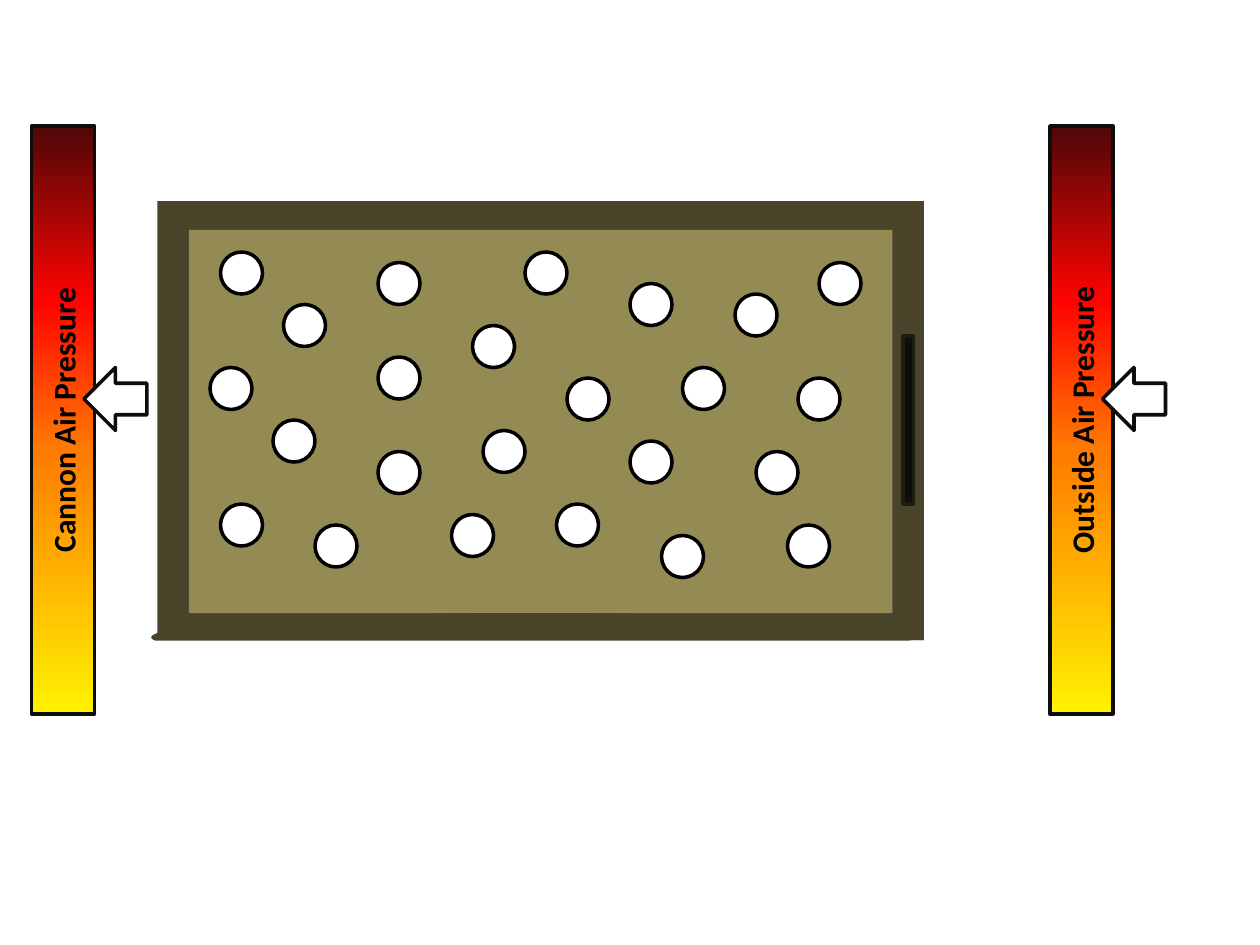
"""Draw a closed cannon of air particles between two pressure gauges."""
from typing import NamedTuple, Optional

from lxml.etree import SubElement
from pptx import Presentation
from pptx.dml.color import RGBColor
from pptx.enum.shapes import MSO_SHAPE
from pptx.enum.text import MSO_ANCHOR, PP_ALIGN
from pptx.oxml.ns import qn
from pptx.util import Inches, Pt

WHITE = RGBColor(0xFF, 0xFF, 0xFF)
BLACK = RGBColor(0, 0, 0)
INK = RGBColor(0x0D, 0x0D, 0x0D)
WALL = RGBColor(0x4A, 0x45, 0x2A)
ROOM = RGBColor(0x94, 0x8A, 0x54)
EDGE = RGBColor(0x1E, 0x1C, 0x11)
HEAT = (
    (0, RGBColor(0xFF, 0xF2, 0x00)),
    (45, RGBColor(0xFF, 0x7A, 0x00)),
    (70, RGBColor(0xFF, 0x03, 0x00)),
    (100, RGBColor(0x4D, 0x08, 0x08)),
)

COLS, ROWS = 120, 90
WIDE, HIGH = Inches(10), Inches(7.5)

RECT, OVAL, ARROW = MSO_SHAPE.RECTANGLE, MSO_SHAPE.OVAL, MSO_SHAPE.RIGHT_ARROW


class Part(NamedTuple):
    """A shape measured in grid columns and rows."""

    kind: MSO_SHAPE
    col: float
    row: float
    wide: float
    high: float
    fill: RGBColor
    line: Optional[RGBColor] = None
    turn: int = 0


class Gauge(NamedTuple):
    """A pressure scale and its marker column."""

    col: float
    mark: float
    label: str


BODY = (
    Part(RECT, 15, 19, 73, 42, WALL),
    Part(RECT, 18, 21.9, 67, 36.5, ROOM),
    Part(RECT, 86, 32, 1, 16, INK, EDGE),
)
DOTS = (
    (46, 41), (26, 40), (43, 49), (50, 24), (65, 35), (21, 48),
    (36, 43), (30, 50), (20, 35), (21, 24), (36, 25), (54, 36),
    (60, 42), (53, 48), (63, 51), (45, 31), (70, 28), (60, 27),
    (27, 29), (36, 34), (72, 43), (75, 50), (76, 36), (78, 25),
)
ENDS = (
    Part(OVAL, 15, 16.9, 73, 4.6, WALL),
    Part(RECT, 13, 17, 79, 2, WHITE, WHITE),
    Part(OVAL, 15, 14.5, 73, 4.6, WHITE),
    Part(OVAL, 14.4, 58.4, 72.6, 4.6, WALL),
    Part(RECT, 12.5, 61, 79, 2, WHITE),
    Part(OVAL, 14.9, 62, 73, 4.6, WHITE),
)
GAUGES = (
    Gauge(3, 8, "Cannon Air Pressure"),
    Gauge(100, 105, "Outside Air Pressure"),
)


def draw(slide, part: Part):
    """Draw one part and return its shape."""
    shape = slide.shapes.add_shape(
        part.kind,
        round(part.col * WIDE / COLS),
        round(part.row * HIGH / ROWS),
        round(part.wide * WIDE / COLS),
        round(part.high * HIGH / ROWS),
    )
    shape.shadow.inherit = False
    shape.rotation = part.turn
    shape.fill.solid()
    shape.fill.fore_color.rgb = part.fill
    if part.line is None:
        shape.line.fill.background()
    else:
        shape.line.color.rgb = part.line
        shape.line.width = Pt(2)
    return shape


def heat(shape) -> None:
    """Fill a shape with the heat scale, hottest at the top."""
    shape.fill.gradient()
    shape.fill.gradient_angle = 90
    stops = shape._element.spPr.find(qn("a:gradFill")).find(qn("a:gsLst"))
    for stop in list(stops):
        stops.remove(stop)
    for share, tint in HEAT:
        stop = SubElement(stops, qn("a:gs"), pos=str(share * 1000))
        SubElement(stop, qn("a:srgbClr"), val=str(tint))


def label(shape, text: str) -> None:
    """Write bold text that reads upwards."""
    frame = shape.text_frame
    frame.text = text
    frame.word_wrap = True
    frame.vertical_anchor = MSO_ANCHOR.MIDDLE
    frame._txBody.bodyPr.set("vert", "vert270")
    line = frame.paragraphs[0]
    line.alignment = PP_ALIGN.CENTER
    font = line.runs[0].font
    font.name, font.size, font.bold = "Calibri", Pt(18), True
    font.color.rgb = BLACK


def scale(slide, gauge: Gauge) -> None:
    """Draw a gauge with its marker."""
    bar = draw(slide, Part(RECT, gauge.col, 12, 6, 56, WHITE, INK))
    heat(bar)
    label(bar, gauge.label)
    draw(slide, Part(ARROW, gauge.mark, 35, 6, 6, WHITE, INK, 180))


def main() -> None:
    """Build and save the slide."""
    deck = Presentation()
    deck.slide_width, deck.slide_height = WIDE, HIGH
    slide = deck.slides.add_slide(deck.slide_layouts[6])
    dots = tuple(Part(OVAL, col, row, 4, 4, WHITE, BLACK) for col, row in DOTS)
    for part in BODY + dots + ENDS:
        draw(slide, part)
    for gauge in GAUGES:
        scale(slide, gauge)
    deck.save("out.pptx")


if __name__ == "__main__":
    main()
